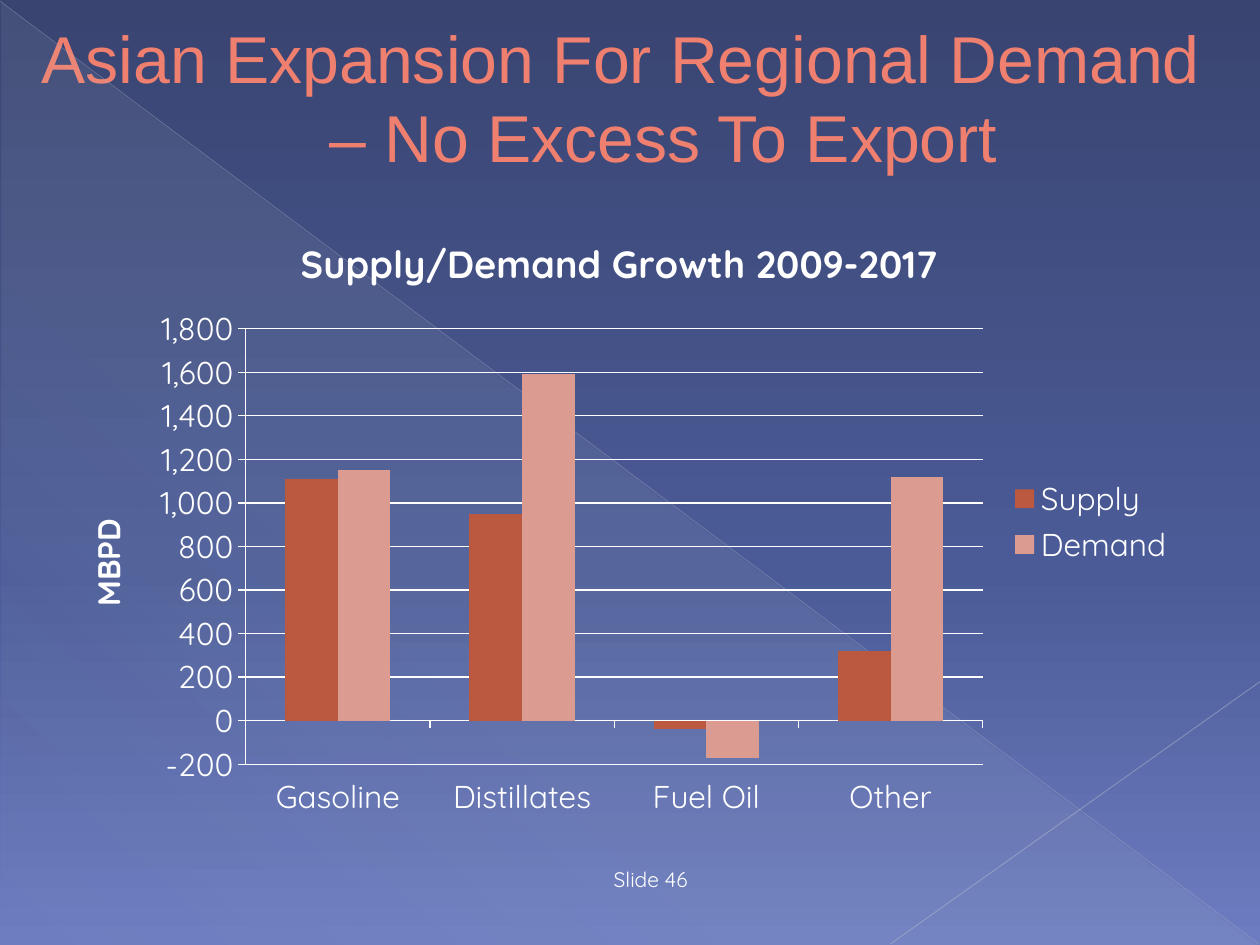
"""Build a slide with a clustered column chart of Asian supply and demand growth."""
from lxml import etree
from pptx import Presentation
from pptx.chart.data import CategoryChartData
from pptx.dml.color import RGBColor
from pptx.enum.chart import XL_CHART_TYPE as ChartType, XL_LEGEND_POSITION as LegendPosition
from pptx.enum.chart import XL_TICK_LABEL_POSITION as LabelPosition, XL_TICK_MARK as TickMark
from pptx.enum.shapes import MSO_CONNECTOR as Connector, MSO_SHAPE as Shape
from pptx.enum.text import MSO_ANCHOR as Anchor, PP_ALIGN as Align
from pptx.oxml import parse_xml
from pptx.oxml.ns import nsdecls, qn
from pptx.util import Inches, Pt

TITLE = "Asian Expansion For Regional Demand \v– No Excess To Export"
FOOTER = "Slide 46"
CHART_TITLE = "Supply/Demand Growth 2009-2017"
VALUE_TITLE = "MBPD"
CATEGORIES = ["Gasoline", "Distillates", "Fuel Oil", "Other"]
SERIES = [
    ("Supply", [1110, 950, -40, 320], "BB5840"),
    ("Demand", [1150, 1590, -170, 1120], "DC9B90"),
]
BACKGROUND_STOPS = [(0, "394471", 100), (60, "4B5B97", 100), (100, "6C7CC0", 100)]
TRIANGLE_STOPS = [(0, "C5D1D7", 10), (70, "C5D1D7", 8), (100, "C5D1D7", 1)]
DIAGONALS = [
    ((0, 0.01), (9.99, 7.49), "BABECD", 0.39, 35),
    ((10, 5.41), (7.07, 7.49), "C2C5D2", 0.47, 45),
]
PLOT_LAYOUT = {"x": 0.17, "y": 0.19, "w": 0.65, "h": 0.7}
WHITE = "FFFFFF"
BODY_FONT = "Quicksand"


def color(value):
    return RGBColor.from_string(value)


def set_font(font, size, value=WHITE, name=BODY_FONT, bold=False):
    font.size, font.name, font.bold = Pt(size), name, bold
    font.color.rgb = color(value)


def set_gradient(fill, parent, stops, angle):
    fill.solid()
    stop_xml = "".join(
        f'<a:gs pos="{position * 1000}"><a:srgbClr val="{value}">'
        f'<a:alpha val="{opacity * 1000}"/></a:srgbClr></a:gs>'
        for position, value, opacity in stops
    )
    gradient = parse_xml(
        f'<a:gradFill {nsdecls("a")} rotWithShape="1"><a:gsLst>{stop_xml}</a:gsLst>'
        f'<a:lin ang="{angle * 60000}" scaled="0"/></a:gradFill>'
    )
    solid = parent.find(".//" + qn("a:solidFill"))
    solid.getparent().replace(solid, gradient)


def add_backdrop(slide):
    background = slide.background
    set_gradient(background.fill, slide.element, BACKGROUND_STOPS, 90)
    triangle = slide.shapes.add_shape(
        Shape.RIGHT_TRIANGLE, Inches(0.01), Inches(0.02), Inches(9.98), Inches(7.48))
    triangle.shadow.inherit = False
    triangle.line.fill.background()
    set_gradient(triangle.fill, triangle.element.spPr, TRIANGLE_STOPS, 133)
    for start, end, value, width, opacity in DIAGONALS:
        diagonal = slide.shapes.add_connector(
            Connector.STRAIGHT, *(Inches(number) for number in start + end))
        diagonal.line.color.rgb = color(value)
        diagonal.line.width = Pt(width)
        properties = diagonal.element.spPr
        tint = properties.find(".//" + qn("a:srgbClr"))
        etree.SubElement(tint, qn("a:alpha")).set("val", str(opacity * 1000))
        etree.SubElement(properties, qn("a:effectLst"))


def add_title(slide):
    title = slide.shapes.title
    title.left, title.top, title.width, title.height = 0, 0, Inches(10), Inches(1.53)
    frame = title.text_frame
    frame.text = TITLE
    frame.vertical_anchor = Anchor.MIDDLE
    paragraph = frame.paragraphs[0]
    paragraph.alignment = Align.CENTER
    properties = paragraph._p.get_or_add_pPr()
    properties.set("marL", str(Inches(0.53)))
    properties.set("indent", str(Inches(-0.53)))
    set_font(paragraph.font, 37.8, "EF7F6E", "Arial")


def add_footer(slide):
    box = slide.shapes.add_textbox(Inches(4), Inches(6.8), Inches(2.33), Inches(0.33))
    frame = box.text_frame
    frame.word_wrap = True
    frame.vertical_anchor = Anchor.BOTTOM
    paragraph = frame.paragraphs[0]
    paragraph.text = FOOTER
    paragraph.alignment = Align.CENTER
    set_font(paragraph.font, 12)


def set_chart_text(titled, text, size):
    frame = titled.text_frame
    frame.text = text
    set_font(frame.paragraphs[0].font, size, bold=True)


def add_chart(slide):
    data = CategoryChartData(number_format="#,##0")
    data.categories = CATEGORIES
    for name, values, _ in SERIES:
        data.add_series(name, values)
    chart = slide.shapes.add_chart(
        ChartType.COLUMN_CLUSTERED, Inches(0.42), Inches(1.67), Inches(9), Inches(4.94), data).chart
    set_font(chart.font, 18)
    chart.has_title = True
    set_chart_text(chart.chart_title, CHART_TITLE, 21.6)
    chart.has_legend = True
    chart.legend.position = LegendPosition.RIGHT
    chart.legend.include_in_layout = False

    plot = chart.plots[0]
    plot.gap_width, plot.overlap, plot.vary_by_categories = 150, 0, False
    for series, (_, _, value) in zip(plot.series, SERIES):
        series.invert_if_negative = False
        series.format.fill.solid()
        series.format.fill.fore_color.rgb = color(value)

    category_axis, value_axis = chart.category_axis, chart.value_axis
    category_axis.tick_label_position = LabelPosition.LOW
    value_axis.minimum_scale, value_axis.maximum_scale, value_axis.major_unit = -200, 1800, 200
    value_axis.tick_labels.number_format = "#,##0"
    value_axis.tick_labels.number_format_is_linked = False
    value_axis.has_major_gridlines = True
    set_chart_text(value_axis.axis_title, VALUE_TITLE, 18)
    for axis in (category_axis, value_axis):
        axis.major_tick_mark, axis.minor_tick_mark = TickMark.OUTSIDE, TickMark.NONE
    for part in (category_axis, value_axis, value_axis.major_gridlines):
        part.format.line.color.rgb = color(WHITE)
        part.format.line.width = Pt(0.75)

    plot_area = chart.element.find(".//" + qn("c:plotArea"))
    for old_layout in plot_area.findall(qn("c:layout")):
        plot_area.remove(old_layout)
    sizes = "".join(f'<c:{key} val="{share}"/>' for key, share in PLOT_LAYOUT.items())
    plot_area.insert(0, parse_xml(
        f'<c:layout {nsdecls("c")}><c:manualLayout><c:layoutTarget val="inner"/>'
        f'<c:xMode val="edge"/><c:yMode val="edge"/>{sizes}</c:manualLayout></c:layout>'))


def main():
    presentation = Presentation()
    presentation.slide_width, presentation.slide_height = Inches(10), Inches(7.5)
    slide = presentation.slides.add_slide(presentation.slide_layouts[5])
    add_backdrop(slide)
    add_title(slide)
    add_footer(slide)
    add_chart(slide)
    presentation.save("out.pptx")


if __name__ == "__main__":
    main()
